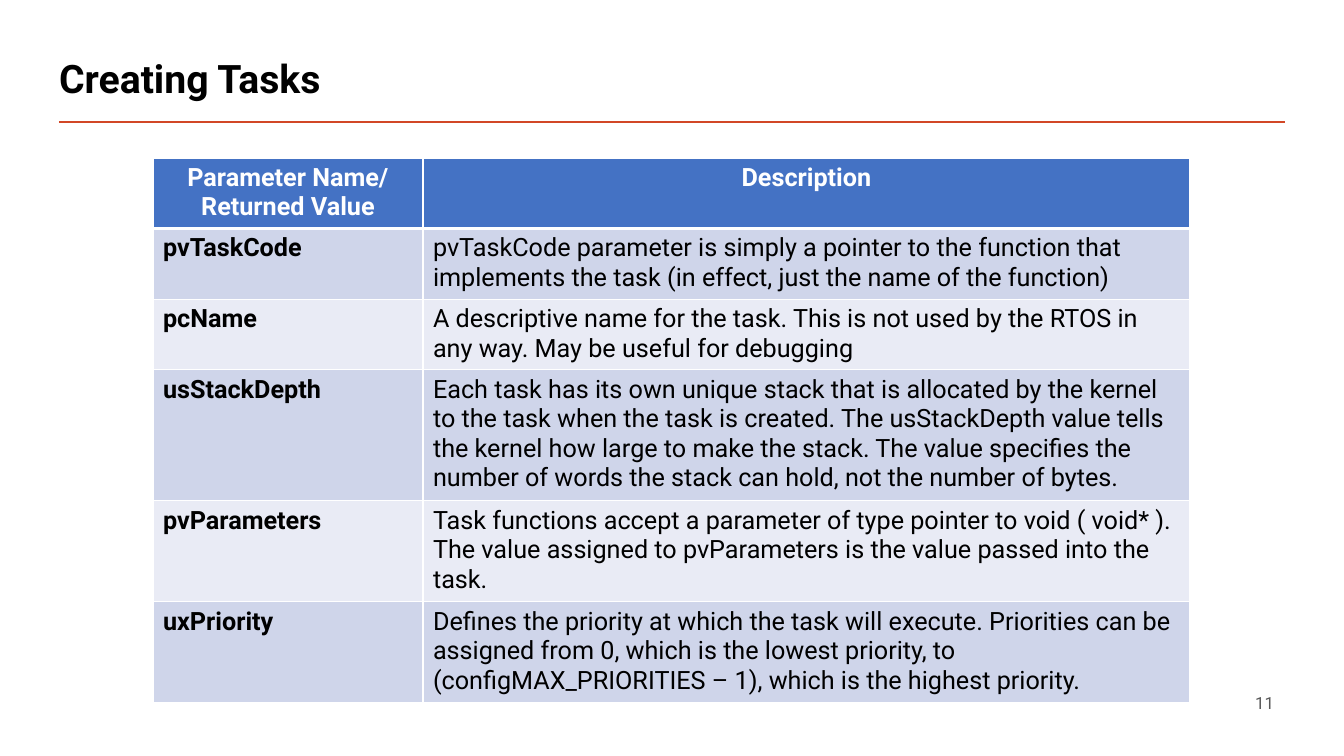
import pptx
import pptx.util
from pptx.dml.color import RGBColor
from pptx.enum.shapes import MSO_CONNECTOR
from pptx.enum.text import MSO_ANCHOR, PP_ALIGN
from pptx.oxml.ns import qn
from lxml import etree

TITLE = "Creating Tasks"
PAGE_NUMBER = "11"
HEADER = ("Parameter Name/\nReturned Value", "Description")
PARAMETERS = [
    ("pvTaskCode",
     "pvTaskCode parameter is simply a pointer to the function that "
     "implements the task (in effect, just the name of the function)"),
    ("pcName",
     "A descriptive name for the task. This is not used by the RTOS in "
     "any way. May be useful for debugging"),
    ("usStackDepth",
     "Each task has its own unique stack that is allocated by the kernel "
     "to the task when the task is created. The usStackDepth value tells "
     "the kernel how large to make the stack. The value specifies the "
     "number of words the stack can hold, not the number of bytes."),
    ("pvParameters",
     "Task functions accept a parameter of type pointer to void ( void* ). "
     "The value assigned to pvParameters is the value passed into the task."),
    ("uxPriority",
     "Defines the priority at which the task will execute. Priorities can be\n"
     "assigned from 0, which is the lowest priority, to "
     "(configMAX_PRIORITIES – 1), which is the highest priority."),
]
COLUMN_WIDTHS = (270, 767)
ROW_HEIGHTS = (68, 69, 69, 129, 99, 98)
FONT = "Roboto"
COLORS = {
    "text": "000000",
    "rule": "D24726",
    "header": "4472C4",
    "header_text": "FFFFFF",
    "border": "FFFFFF",
    "odd_row": "CFD5EA",
    "even_row": "E9EBF5",
    "page_number": "595959",
}
PX_PER_INCH = 100.8


def px(n):
    return pptx.util.Inches(n / PX_PER_INCH)


def rgb(name):
    return RGBColor.from_string(COLORS[name])


def style(tf, size, color, bold=False, align=PP_ALIGN.LEFT):
    for p in tf.paragraphs:
        p.alignment = align
        p.font.name = FONT
        p.font.size = pptx.util.Pt(size)
        p.font.bold = bold
        p.font.color.rgb = rgb(color)


def set_borders(cell, top, bottom):
    """Draw all four cell borders; top and bottom are widths in points."""
    tc_pr = cell._tc.get_or_add_tcPr()
    sides = (("a:lnL", 1), ("a:lnR", 1), ("a:lnT", top), ("a:lnB", bottom))
    for i, (tag, width) in enumerate(sides):
        ln = etree.Element(qn(tag), w=str(pptx.util.Pt(width)))
        fill = etree.SubElement(ln, qn("a:solidFill"))
        etree.SubElement(fill, qn("a:srgbClr"), val=COLORS["border"])
        tc_pr.insert(i, ln)


def add_title(slide):
    sp = slide.shapes.title
    sp.left, sp.top, sp.width, sp.height = px(49), px(45), px(1008), px(71)
    tf = sp.text_frame
    tf.text = TITLE
    tf.vertical_anchor = MSO_ANCHOR.MIDDLE
    style(tf, 28, "text", bold=True)
    tf.paragraphs[0].line_spacing = 0.9


def add_rule(slide):
    line = slide.shapes.add_connector(
        MSO_CONNECTOR.STRAIGHT, px(59), px(122), px(1285), px(122))
    line.line.color.rgb = rgb("rule")
    line.line.width = pptx.util.Pt(2)
    etree.SubElement(line._element.spPr, qn("a:effectLst"))


def add_parameter_table(slide):
    rows = [HEADER] + PARAMETERS
    table = slide.shapes.add_table(
        len(rows), len(HEADER), px(153), px(158),
        px(sum(COLUMN_WIDTHS)), px(sum(ROW_HEIGHTS))).table
    for column, width in zip(table.columns, COLUMN_WIDTHS):
        column.width = px(width)
    for i, (row, height) in enumerate(zip(rows, ROW_HEIGHTS)):
        table.rows[i].height = px(height)
        is_header = i == 0
        fill = "header" if is_header else "odd_row" if i % 2 else "even_row"
        for j, text in enumerate(row):
            cell = table.cell(i, j)
            cell.text = text
            cell.fill.solid()
            cell.fill.fore_color.rgb = rgb(fill)
            set_borders(cell, top=3 if i == 1 else 1,
                        bottom=3 if is_header else 1)
            style(cell.text_frame, 18,
                  "header_text" if is_header else "text",
                  bold=is_header or j == 0,
                  align=PP_ALIGN.CENTER if is_header else PP_ALIGN.LEFT)


def add_page_number(slide):
    tf = slide.shapes.add_textbox(px(923), px(683), px(361), px(40)).text_frame
    tf.word_wrap = True
    tf.vertical_anchor = MSO_ANCHOR.MIDDLE
    tf.text = PAGE_NUMBER
    style(tf, 12, "page_number", align=PP_ALIGN.RIGHT)


def main():
    prs = pptx.Presentation()
    prs.slide_width, prs.slide_height = px(1344), px(756)
    slide = prs.slides.add_slide(prs.slide_layouts[5])
    add_rule(slide)
    add_title(slide)
    add_page_number(slide)
    add_parameter_table(slide)
    prs.save("out.pptx")


if __name__ == "__main__":
    main()
